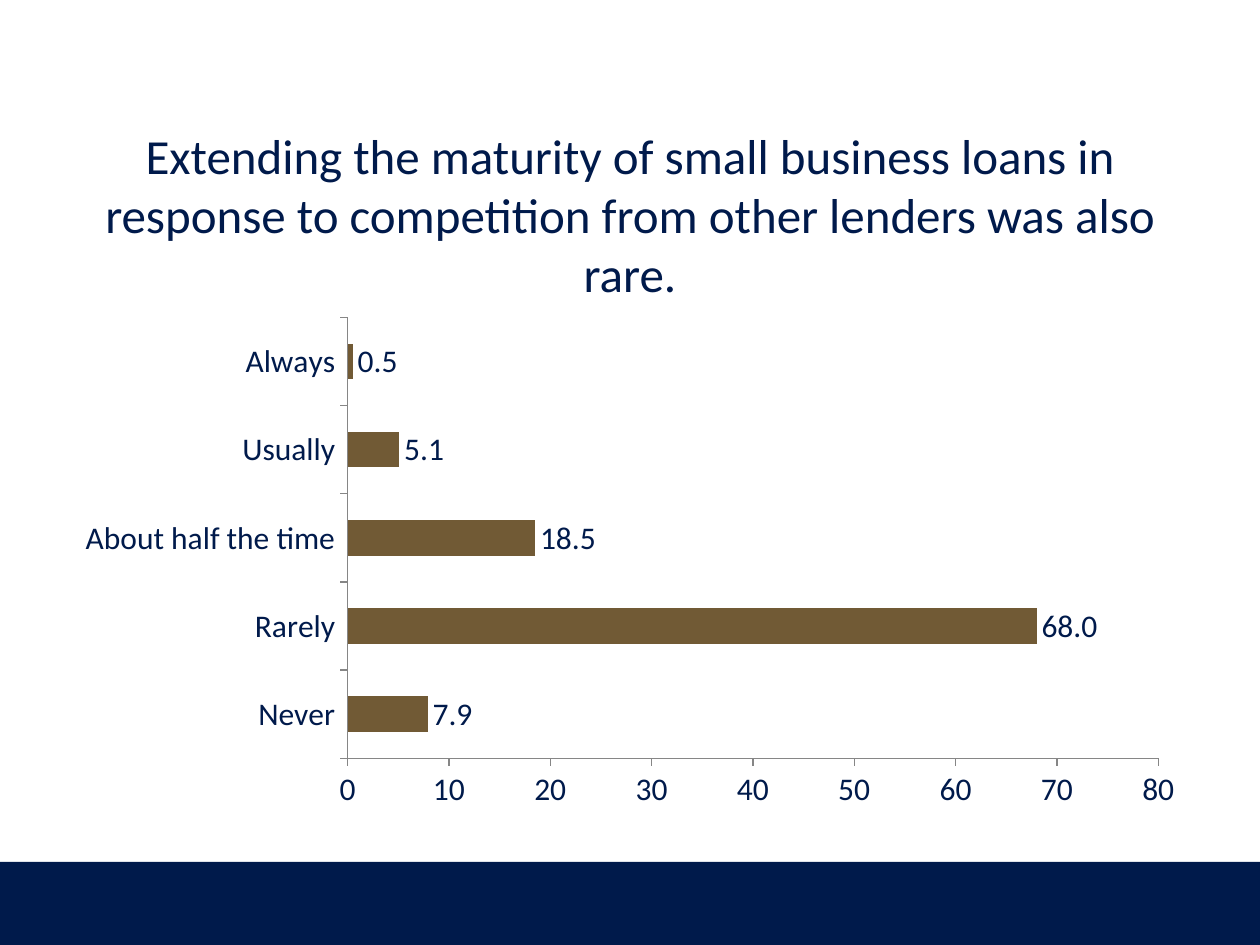
from pptx import Presentation
from pptx.chart.data import CategoryChartData
from pptx.dml.color import RGBColor
from pptx.enum.chart import XL_CHART_TYPE as ChartType, XL_LABEL_POSITION as LabelPos, XL_TICK_MARK as Tick
from pptx.enum.shapes import MSO_SHAPE as Shape
from pptx.enum.text import MSO_ANCHOR as Anchor, PP_ALIGN as Align
from pptx.util import Inches, Pt

COLORS = {"navy": "001A4B", "brown": "715A35", "axis": "868686"}
TITLE = ("Extending the maturity of small business loans in response to "
         "competition from other lenders was also rare.")
ANSWERS = {"Never": 7.9, "Rarely": 68, "About half the time": 18.5,
           "Usually": 5.1, "Always": 0.5}


def color(name):
    return RGBColor.from_string(COLORS[name])


def set_all(target, **values):
    for name, value in values.items():
        setattr(target, name, value)


def style_font(font, size):
    set_all(font, name="Calibri", size=Pt(size), bold=False)
    font.color.rgb = color("navy")


def add_band(page, left, top, width, height):
    band = page.shapes.add_shape(Shape.RECTANGLE, *map(Inches, (left, top, width, height)))
    band.shadow.inherit = False
    band.fill.solid()
    band.fill.fore_color.rgb = color("navy")
    band.line.fill.background()


def add_title(page, text, left, top, width, height):
    box = page.shapes.add_textbox(*map(Inches, (left, top, width, height)))
    set_all(box.text_frame, word_wrap=True, vertical_anchor=Anchor.MIDDLE)
    para = box.text_frame.paragraphs[0]
    para.alignment = Align.CENTER
    span = para.add_run()
    span.text = text
    style_font(span.font, 28)


def style_axis(axis):
    set_all(axis, has_major_gridlines=False, major_tick_mark=Tick.OUTSIDE,
            minor_tick_mark=Tick.NONE)
    axis.format.line.color.rgb = color("axis")
    axis.format.line.width = Pt(0.75)


def add_bar_chart(page, answers, left, top, width, height):
    data = CategoryChartData()
    data.categories = list(answers)
    data.add_series("Series 1", list(answers.values()))
    frame = page.shapes.add_chart(ChartType.BAR_CLUSTERED,
                                  *map(Inches, (left, top, width, height)), data)
    chart = frame.chart
    set_all(chart, has_legend=False, has_title=False)
    style_font(chart.font, 18)
    for axis in (chart.category_axis, chart.value_axis):
        style_axis(axis)
    set_all(chart.value_axis, minimum_scale=0, maximum_scale=80, major_unit=10)

    plot = chart.plots[0]
    set_all(plot, gap_width=150, vary_by_categories=False, has_data_labels=True)
    set_all(plot.data_labels, show_value=True, number_format="#,##0.0",
            number_format_is_linked=False, position=LabelPos.OUTSIDE_END)
    fill = plot.series[0].format.fill
    fill.solid()
    fill.fore_color.rgb = color("brown")


def main():
    deck = Presentation()
    set_all(deck, slide_width=Inches(10), slide_height=Inches(7.5))
    page = deck.slides.add_slide(deck.slide_layouts[6])
    add_band(page, 0, 6.84, 10, 0.66)
    add_title(page, TITLE, 0.5, 1.07, 9, 1.25)
    add_bar_chart(page, ANSWERS, 0.5, 2.44, 9, 4.06)
    deck.save("out.pptx")


if __name__ == "__main__":
    main()
